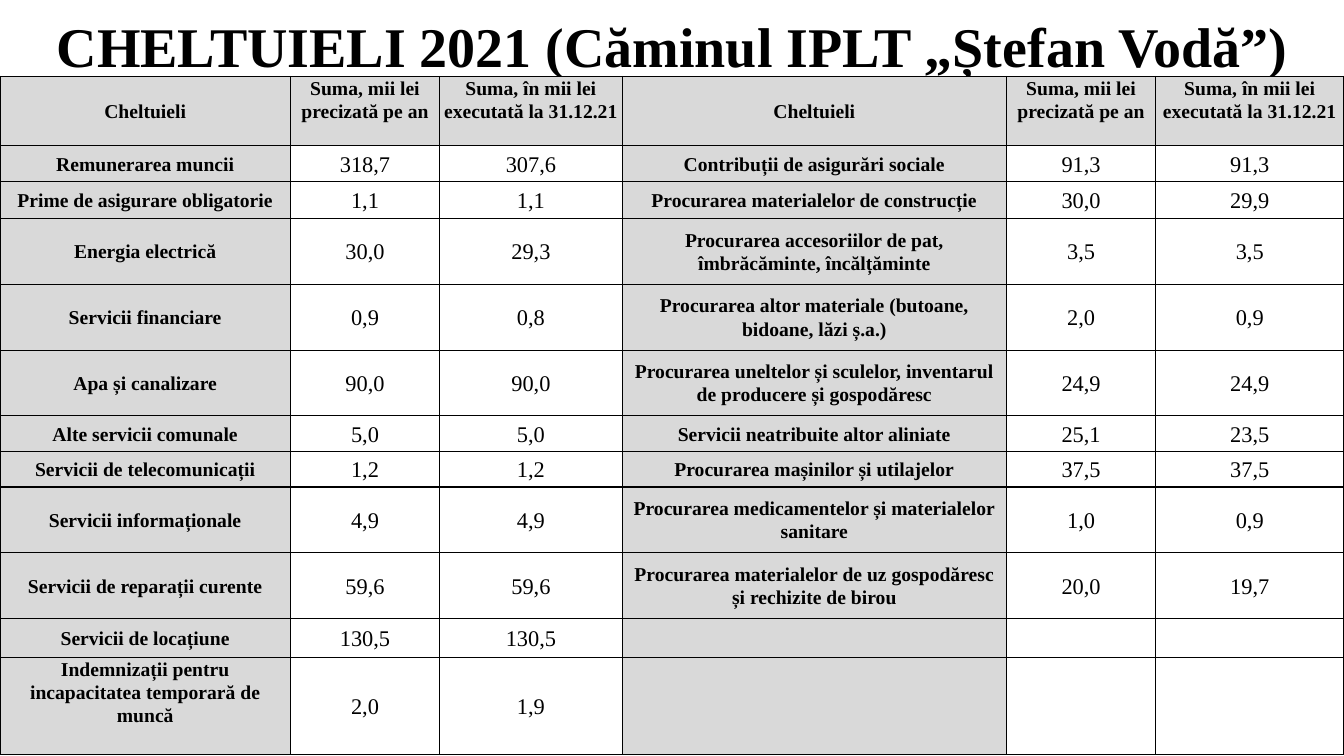
from lxml import etree
from pptx import Presentation
from pptx.dml.color import RGBColor
from pptx.enum.text import MSO_ANCHOR, PP_ALIGN
from pptx.oxml.ns import qn
from pptx.util import Pt

TOP = MSO_ANCHOR.TOP
MIDDLE = MSO_ANCHOR.MIDDLE
CENTER = PP_ALIGN.CENTER

FONT = "Times New Roman"
COLORS = {"ink": "000000", "paper": "FFFFFF", "label": "D9D9D9"}
WIDTHS = [207.5, 106.5, 130.5, 274.5, 106.5, 134.5]
HEIGHTS = [49.5, 25.4, 26.5, 47, 47, 47, 25.4, 25.4, 47, 47, 27.5, 69.5]
LABELS = (0, 3)

HEAD = ["Cheltuieli", "Suma, mii lei\nprecizată pe an",
        "Suma, în mii lei\nexecutată la 31.12.21"] * 2
ROWS = [
    HEAD,
    ["Remunerarea muncii", "318,7", "307,6",
     "Contribuții de asigurări sociale", "91,3", "91,3"],
    ["Prime de asigurare obligatorie", "1,1", "1,1",
     "Procurarea materialelor de construcție", "30,0", "29,9"],
    ["Energia electrică", "30,0", "29,3",
     "Procurarea accesoriilor de pat, îmbrăcăminte, încălțăminte", "3,5", "3,5"],
    ["Servicii financiare", "0,9", "0,8",
     "Procurarea altor materiale (butoane, bidoane, lăzi ș.a.)", "2,0", "0,9"],
    ["Apa și canalizare", "90,0", "90,0",
     "Procurarea uneltelor și sculelor, inventarul de producere și gospodăresc",
     "24,9", "24,9"],
    ["Alte servicii comunale", "5,0", "5,0",
     "Servicii neatribuite altor aliniate", "25,1", "23,5"],
    ["Servicii de telecomunicații", "1,2", "1,2",
     "Procurarea mașinilor și utilajelor", "37,5", "37,5"],
    ["Servicii informaționale", "4,9", "4,9",
     "Procurarea medicamentelor și materialelor sanitare", "1,0", "0,9"],
    ["Servicii de reparații curente", "59,6", "59,6",
     "Procurarea materialelor de uz gospodăresc și rechizite de birou",
     "20,0", "19,7"],
    ["Servicii de locațiune", "130,5", "130,5", "", "", ""],
    ["Indemnizații pentru incapacitatea temporară de muncă", "2,0", "1,9",
     "", "", ""],
]


def paint(fill, name):
    fill.solid()
    fill.fore_color.rgb = RGBColor.from_string(COLORS[name])


def style(frame, size, bold, space=1.0):
    for para in frame.paragraphs:
        para.alignment = CENTER
        para.line_spacing = space
        for run in para.runs:
            run.font.name = FONT
            run.font.size = Pt(size)
            run.font.bold = bold
            run.font.color.rgb = RGBColor.from_string(COLORS["ink"])


def border(cell):
    props = cell._tc.get_or_add_tcPr()
    for index, side in enumerate(("lnL", "lnR", "lnT", "lnB")):
        line = etree.Element(qn("a:" + side), w=str(Pt(1)))
        solid = etree.SubElement(line, qn("a:solidFill"))
        etree.SubElement(solid, qn("a:srgbClr"), val=COLORS["ink"])
        props.insert(index, line)


def add_title(slide, text):
    box = slide.shapes.add_textbox(Pt(0), Pt(0), Pt(960), Pt(65))
    paint(box.fill, "paper")
    frame = box.text_frame
    frame.word_wrap = True
    frame.vertical_anchor = MIDDLE
    frame.text = text
    style(frame, 40, True)


def fill_cell(cell, text, label, head, anchor):
    cell.margin_left = cell.margin_right = Pt(2.7)
    cell.margin_top = cell.margin_bottom = Pt(0)
    cell.vertical_anchor = anchor
    paint(cell.fill, "label" if label or head else "paper")
    border(cell)
    cell.text_frame.text = text
    bold = label or head
    style(cell.text_frame, 14 if bold else 16, bold, 1.07)


def add_costs(slide):
    frame = slide.shapes.add_table(len(ROWS), len(WIDTHS), Pt(0), Pt(54.7),
                                   Pt(sum(WIDTHS)), Pt(sum(HEIGHTS)))
    table = frame.table
    table.first_row = False
    table.horz_banding = False
    for column, width in zip(table.columns, WIDTHS):
        column.width = Pt(width)
    for row, height in zip(table.rows, HEIGHTS):
        row.height = Pt(height)
    last = len(ROWS) - 1
    for r, texts in enumerate(ROWS):
        for c, text in enumerate(texts):
            label = c in LABELS
            high = (r == 0 and not label) or (r == last and label)
            fill_cell(table.cell(r, c), text, label, r == 0,
                      TOP if high else MIDDLE)


def main():
    deck = Presentation()
    deck.slide_width = Pt(960)
    deck.slide_height = Pt(540)
    slide = deck.slides.add_slide(deck.slide_layouts[6])
    paint(slide.background.fill, "paper")
    add_title(slide, "CHELTUIELI 2021 (Căminul IPLT „Ștefan Vodă”)")
    add_costs(slide)
    deck.save("out.pptx")


if __name__ == "__main__":
    main()
